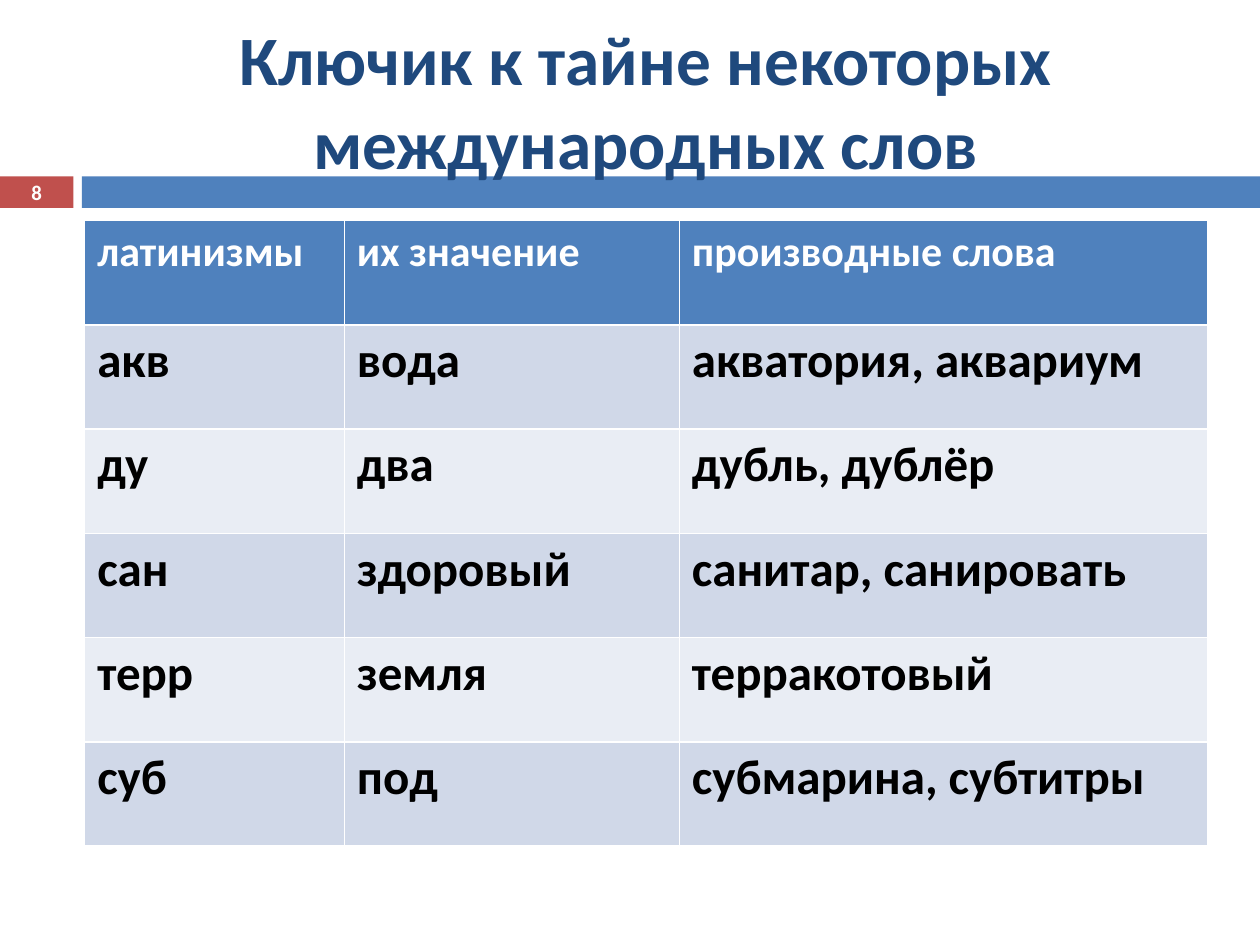
from pptx import Presentation
from pptx.dml.color import RGBColor
from pptx.enum.shapes import MSO_SHAPE
from pptx.enum.text import MSO_ANCHOR, PP_ALIGN
from pptx.util import Pt

COLORS = {"red": "C0504D", "blue": "4F81BD", "navy": "1F497D", "white": "FFFFFF",
          "black": "000000", "band": "D0D8E8", "light": "E9EDF4"}


def add_text(tf, text, size, color, align):
    p = tf.paragraphs[0]
    p.alignment = align
    r = p.add_run()
    r.text = text
    for name, value in {"name": "Calibri", "size": Pt(size), "bold": True}.items():
        setattr(r.font, name, value)
    r.font.color.rgb = RGBColor.from_string(COLORS[color])


def fill(obj, color):
    obj.fill.solid()
    obj.fill.fore_color.rgb = RGBColor.from_string(COLORS[color])


prs = Presentation()
prs.slide_width, prs.slide_height = Pt(720), Pt(540)
s = prs.slides.add_slide(prs.slide_layouts[6])

for left, width, color in [(0, 42, "red"), (46.8, 673.2, "blue")]:
    sp = s.shapes.add_shape(MSO_SHAPE.RECTANGLE, Pt(left), Pt(100.8), Pt(width), Pt(18))
    sp.shadow.inherit = False
    sp.line.fill.background()
    fill(sp, color)

texts = [
    ("Ключик к тайне некоторых международных слов", (48, 18, 642, 78), 39.6, "navy"),
    ("8", (0, 100, 42, 19.2), 11.9, "white"),
]
for text, box, size, color in texts:
    tf = s.shapes.add_textbox(*map(Pt, box)).text_frame
    for name, value in {"word_wrap": True, "vertical_anchor": MSO_ANCHOR.MIDDLE}.items():
        setattr(tf, name, value)
    add_text(tf, text, size, color, PP_ALIGN.CENTER)

rows = [
    ("латинизмы", "их значение", "производные слова"),
    ("акв", "вода", "акватория, аквариум"),
    ("ду", "два", "дубль, дублёр"),
    ("сан", "здоровый", "санитар, санировать"),
    ("терр", "земля", "терракотовый"),
    ("суб", "под", "субмарина, субтитры"),
]
widths = [148.4, 191.4, 302.2]
row_height = 59.6
table = s.shapes.add_table(len(rows), len(widths), Pt(48.4), Pt(126),
                           Pt(sum(widths)), Pt(row_height * len(rows))).table
for column, width in zip(table.columns, widths):
    column.width = Pt(width)
for i, words in enumerate(rows):
    table.rows[i].height = Pt(row_height)
    size, color = (28, "black") if i else (24, "white")
    background = ("band" if i % 2 else "light") if i else "blue"
    for j, word in enumerate(words):
        cell = table.cell(i, j)
        fill(cell, background)
        add_text(cell.text_frame, word, size, color, PP_ALIGN.LEFT)

prs.save("out.pptx")
